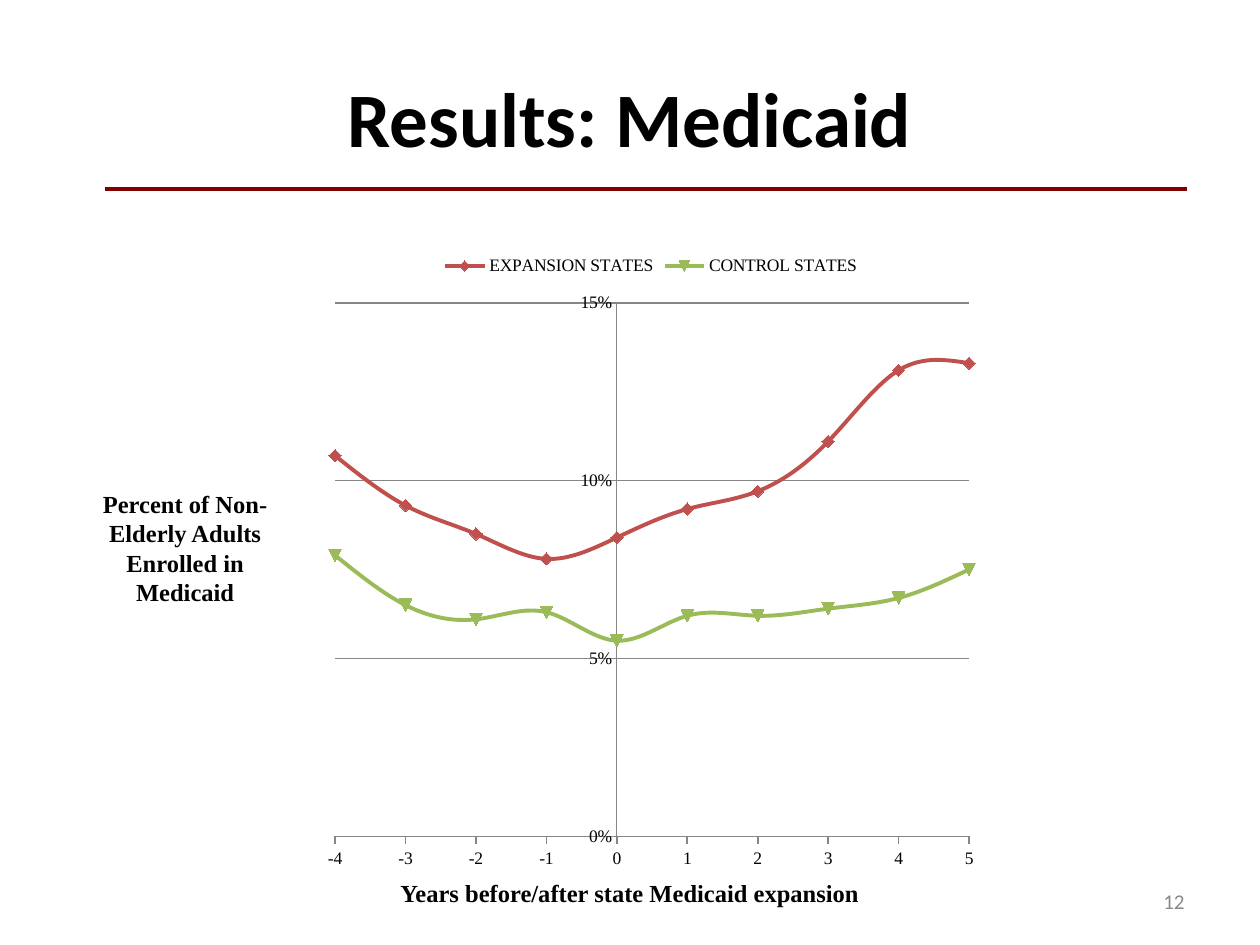
from lxml import etree
from pptx import Presentation
from pptx import util as u
from pptx.chart.data import XyChartData
from pptx.dml.color import RGBColor
from pptx.enum import chart as ch, shapes, text
from pptx.oxml import parse_xml
from pptx.oxml.ns import nsdecls, qn

BLACK = RGBColor(0x00, 0x00, 0x00)
MAROON = RGBColor(0x80, 0x00, 0x00)
GRAY = RGBColor(0x89, 0x89, 0x89)
AXIS_GRAY = RGBColor(0x86, 0x86, 0x86)
RED = RGBColor(0xC0, 0x50, 0x4D)
GREEN = RGBColor(0x9B, 0xBB, 0x59)
SERIF, SANS = "Times New Roman", "Calibri"

TITLE = "Results: Medicaid"
YEARS = range(-4, 6)
SERIES = [
    ("EXPANSION STATES", RED,
     [0.107, 0.093, 0.085, 0.078, 0.084, 0.092, 0.097, 0.111, 0.131, 0.133]),
    ("CONTROL STATES", GREEN,
     [0.079, 0.065, 0.061, 0.063, 0.055, 0.062, 0.062, 0.064, 0.067, 0.075]),
]
# text, box, font, size, bold, colour, alignment, anchor
LABELS = [
    ("12", (7.17, 6.95, 2.33, 0.4), SANS, 12, False, GRAY,
     text.PP_ALIGN.RIGHT, text.MSO_ANCHOR.MIDDLE),
    ("Percent of Non-Elderly Adults Enrolled in Medicaid", (0.67, 3.83, 1.6, 1.04),
     SERIF, 14, True, BLACK, text.PP_ALIGN.CENTER, text.MSO_ANCHOR.TOP),
    ("Years before/after state Medicaid expansion", (3.08, 6.92, 4.19, 0.34),
     SERIF, 14, True, BLACK, text.PP_ALIGN.LEFT, text.MSO_ANCHOR.TOP),
]
CHART_BOX = (2.5, 1.92, 5.33, 5.08)
PLOT_SHARES = {"x": 0.03, "y": 0.095, "w": 0.944, "h": 0.834}


def inches(box):
    return [u.Inches(value) for value in box]


def write(shape, words, font, size, bold, color, alignment, anchor):
    frame = shape.text_frame
    frame.word_wrap = True
    frame.vertical_anchor = anchor
    frame.text = words
    paragraph = frame.paragraphs[0]
    paragraph.alignment = alignment
    run_font = paragraph.runs[0].font
    run_font.name, run_font.size, run_font.bold = font, u.Pt(size), bold
    run_font.color.rgb = color


def style_axis(axis, low, high, step, tick_mark, width):
    axis.minimum_scale, axis.maximum_scale, axis.major_unit = low, high, step
    axis.major_tick_mark = tick_mark
    axis.minor_tick_mark = ch.XL_TICK_MARK.NONE
    axis.format.line.color.rgb = AXIS_GRAY
    axis.format.line.width = u.Pt(width)


def place_plot(chart):
    """Fix the inner plot area at the given shares of the chart."""
    plot_area = chart._chartSpace.chart.plotArea
    for old in plot_area.findall(qn("c:layout")):
        plot_area.remove(old)
    sizes = "".join(f'<c:{key} val="{share}"/>' for key, share in PLOT_SHARES.items())
    plot_area.insert(0, parse_xml(
        f'<c:layout {nsdecls("c")}><c:manualLayout><c:layoutTarget val="inner"/>'
        f'<c:xMode val="edge"/><c:yMode val="edge"/>{sizes}</c:manualLayout></c:layout>'))


def add_enrollment_chart(slide):
    data = XyChartData()
    for name, _, values in SERIES:
        series = data.add_series(name)
        for year, value in zip(YEARS, values):
            series.add_data_point(year, value)
    chart = slide.shapes.add_chart(
        ch.XL_CHART_TYPE.XY_SCATTER_SMOOTH, *inches(CHART_BOX), data).chart
    chart.has_title = False
    chart.font.name, chart.font.size = SERIF, u.Pt(10)
    chart.font.color.rgb = BLACK
    chart.has_legend = True
    chart.legend.position = ch.XL_LEGEND_POSITION.TOP
    chart.legend.include_in_layout = False

    style_axis(chart.category_axis, -4, 5, 1, ch.XL_TICK_MARK.OUTSIDE, 1)
    chart.category_axis.has_major_gridlines = False
    chart.category_axis.tick_labels.number_format = "0"
    chart.category_axis.tick_labels.number_format_is_linked = False
    value_axis = chart.value_axis
    style_axis(value_axis, 0, 0.15, 0.05, ch.XL_TICK_MARK.NONE, 0.75)
    value_axis.has_major_gridlines = True
    value_axis.major_gridlines.format.line.color.rgb = AXIS_GRAY
    value_axis.major_gridlines.format.line.width = u.Pt(1)
    value_axis.tick_labels.number_format = "0%"
    value_axis.tick_labels.number_format_is_linked = False

    chart.plots[0].vary_by_categories = False
    for index, (series, (_, color, _)) in enumerate(zip(chart.plots[0].series, SERIES), 1):
        # Automatic markers follow the series index: 1 diamond, 2 triangle
        series._element.find(qn("c:idx")).set("val", str(index))
        series._element.get_or_add_smooth().val = True
        series.format.line.color.rgb = color
        series.format.line.width = u.Pt(2.25)
        series.marker.size = 7
        series.marker.format.fill.solid()
        series.marker.format.fill.fore_color.rgb = color
        series.marker.format.line.color.rgb = color
    place_plot(chart)


def main():
    presentation = Presentation()
    presentation.slide_width, presentation.slide_height = u.Inches(10), u.Inches(7.5)
    slide = presentation.slides.add_slide(presentation.slide_layouts[5])

    title = slide.shapes.title
    title.left, title.top, title.width, title.height = inches((0, 0.3, 10, 1.25))
    write(title, TITLE, SANS, 44, True, BLACK,
          text.PP_ALIGN.CENTER, text.MSO_ANCHOR.MIDDLE)

    rule = slide.shapes.add_connector(
        shapes.MSO_CONNECTOR.STRAIGHT, *inches((0.83, 1.5, 9.42, 1.5)))
    rule.line.color.rgb = MAROON
    rule.line.width = u.Pt(2.25)
    etree.SubElement(rule._element.spPr, qn("a:effectLst"))

    add_enrollment_chart(slide)
    for words, box, *style in LABELS:
        write(slide.shapes.add_textbox(*inches(box)), words, *style)
    presentation.save("out.pptx")


if __name__ == "__main__":
    main()
